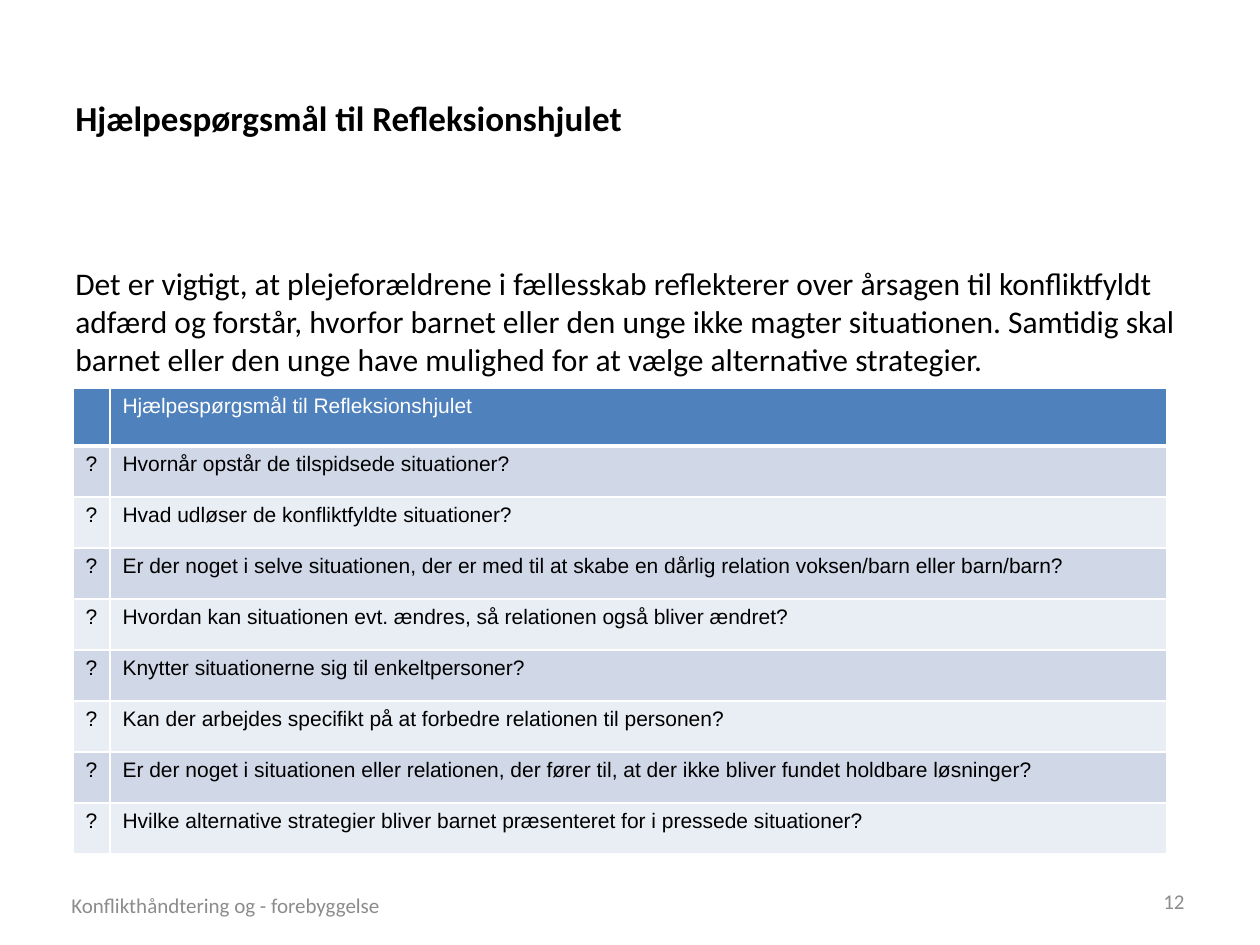
from dataclasses import dataclass

import pptx
import pptx.dml.color
import pptx.enum.text
import pptx.oxml
import pptx.oxml.ns
import pptx.util

EMU_PER_PX = 914400 / 126
ALIGN = pptx.enum.text.PP_ALIGN
ANCHOR = pptx.enum.text.MSO_ANCHOR


@dataclass(frozen=True)
class Theme:
    paper: str = "FFFFFF"
    ink: str = "000000"
    muted: str = "8C8C8C"
    header: str = "4F81BD"
    bands: tuple[str, str] = ("D0D8E8", "E9EDF4")
    heading_font: str = "Calibri"
    table_font: str = "Arial"
    title_size: int = 20
    body_size: int = 18
    small_size: int = 12
    border: int = 1
    header_border: int = 3


@dataclass(frozen=True)
class TextBlock:
    text: str
    left: int
    top: int
    width: int
    height: int
    size: int
    color: str
    bold: bool = False
    align: ALIGN = ALIGN.LEFT
    anchor: ANCHOR = ANCHOR.MIDDLE


@dataclass(frozen=True)
class Row:
    marker: str
    text: str
    height: int
    fill: str
    color: str
    bottom_border: int


THEME = Theme()
HEADING = "Hjælpespørgsmål til Refleksionshjulet"
INTRO = (
    "Det er vigtigt, at plejeforældrene i fællesskab reflekterer over årsagen "
    "til konfliktfyldt adfærd og forstår, hvorfor barnet eller den unge ikke "
    "magter situationen. Samtidig skal barnet eller den unge have mulighed "
    "for at vælge alternative strategier."
)
QUESTIONS = [
    "Hvornår opstår de tilspidsede situationer?",
    "Hvad udløser de konfliktfyldte situationer?",
    "Er der noget i selve situationen, der er med til at skabe en dårlig relation voksen/barn eller barn/barn?",
    "Hvordan kan situationen evt. ændres, så relationen også bliver ændret?",
    "Knytter situationerne sig til enkeltpersoner?",
    "Kan der arbejdes specifikt på at forbedre relationen til personen?",
    "Er der noget i situationen eller relationen, der fører til, at der ikke bliver fundet holdbare løsninger?",
    "Hvilke alternative strategier bliver barnet præsenteret for i pressede situationer?",
]
BLOCKS = [
    TextBlock(HEADING, 63, 38, 1134, 158, THEME.title_size, THEME.ink, bold=True),
    TextBlock(INTRO, 63, 258, 1134, 128, THEME.body_size, THEME.ink, anchor=ANCHOR.TOP),
    TextBlock("Konflikthåndtering og - forebyggelse", 59, 880, 400, 50, THEME.small_size, THEME.muted),
    TextBlock("12", 903, 876, 294, 50, THEME.small_size, THEME.muted, align=ALIGN.RIGHT),
]
ROWS = [Row("", HEADING, 58, THEME.header, THEME.paper, THEME.header_border)] + [
    Row("?", question, 51, THEME.bands[index % 2], THEME.ink, THEME.border)
    for index, question in enumerate(QUESTIONS)
]
TABLE_LEFT, TABLE_TOP = 73, 388
COLUMN_WIDTHS = (37, 1057)
MARKER_MARGIN = 6


def px(length: int) -> pptx.util.Emu:
    return pptx.util.Emu(round(length * EMU_PER_PX))


def rgb(color: str) -> pptx.dml.color.RGBColor:
    return pptx.dml.color.RGBColor.from_string(color)


def write(paragraph, text: str, font: str, size: int, color: str, bold: bool = False) -> None:
    run = paragraph.add_run()
    run.text = text
    run.font.name = font
    run.font.size = pptx.util.Pt(size)
    run.font.bold = bold
    run.font.color.rgb = rgb(color)


def draw_block(slide, block: TextBlock) -> None:
    box = slide.shapes.add_textbox(px(block.left), px(block.top), px(block.width), px(block.height))
    frame = box.text_frame
    frame.word_wrap = True
    frame.vertical_anchor = block.anchor
    paragraph = frame.paragraphs[0]
    paragraph.alignment = block.align
    write(paragraph, block.text, THEME.heading_font, block.size, block.color, block.bold)


def set_borders(cell, bottom_border: int) -> None:
    properties = cell._tc.get_or_add_tcPr()
    for side in "LRTB":
        points = bottom_border if side == "B" else THEME.border
        properties.append(pptx.oxml.parse_xml(
            f'<a:ln{side} {pptx.oxml.ns.nsdecls("a")} w="{pptx.util.Pt(points)}">'
            f'<a:solidFill><a:srgbClr val="{THEME.paper}"/></a:solidFill></a:ln{side}>'
        ))


def draw_table(slide, rows: list[Row]) -> None:
    table = slide.shapes.add_table(
        len(rows), len(COLUMN_WIDTHS), px(TABLE_LEFT), px(TABLE_TOP),
        px(sum(COLUMN_WIDTHS)), px(sum(row.height for row in rows)),
    ).table
    table.first_row = False
    table.horz_banding = False
    for column, width in zip(table.columns, COLUMN_WIDTHS):
        column.width = px(width)
    for index, row in enumerate(rows):
        table.rows[index].height = px(row.height)
        marker, question = table.cell(index, 0), table.cell(index, 1)
        marker.margin_left = marker.margin_right = px(MARKER_MARGIN)
        marker.text_frame.paragraphs[0].alignment = ALIGN.CENTER
        for cell, text in ((marker, row.marker), (question, row.text)):
            set_borders(cell, row.bottom_border)
            cell.fill.solid()
            cell.fill.fore_color.rgb = rgb(row.fill)
            if text:
                write(cell.text_frame.paragraphs[0], text, THEME.table_font, THEME.small_size, row.color)


def main() -> None:
    deck = pptx.Presentation()
    deck.slide_width, deck.slide_height = px(1260), px(945)
    slide = deck.slides.add_slide(deck.slide_layouts[6])
    slide.background.fill.solid()
    slide.background.fill.fore_color.rgb = rgb(THEME.paper)
    for block in BLOCKS:
        draw_block(slide, block)
    draw_table(slide, ROWS)
    deck.save("out.pptx")


if __name__ == "__main__":
    main()
